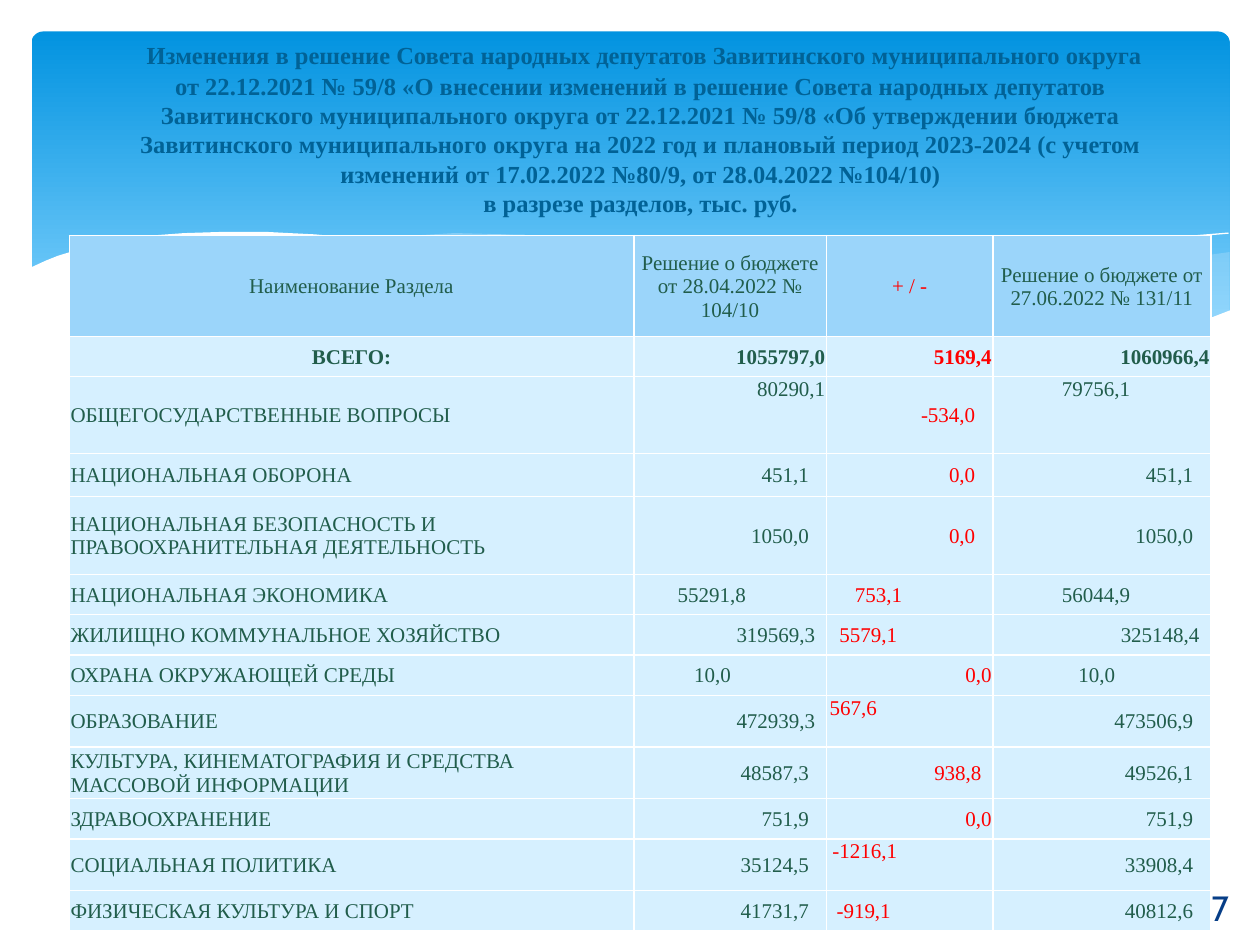
"""Builds the slide on budget changes by section: wave header, title and table."""
from lxml import etree
from pptx import Presentation
from pptx import util as u
from pptx.dml.color import RGBColor
from pptx.enum import shapes, text
from pptx.oxml.ns import qn

SERIF, GREEN, RED, WHITE = "Times New Roman", "215D4B", "FF0000", "FFFFFF"
LEFT, CENTER, RIGHT = text.PP_ALIGN.LEFT, text.PP_ALIGN.CENTER, text.PP_ALIGN.RIGHT
TOP, MIDDLE = text.MSO_ANCHOR.TOP, text.MSO_ANCHOR.MIDDLE


def rgb(value):
    return RGBColor.from_string(value)


def write(p, words, color, align, **fmt):
    p.alignment = align
    r = p.add_run()
    r.text = words
    r.font.color.rgb = rgb(color)
    for name, value in fmt.items():
        setattr(r.font, name, value)


prs = Presentation()
prs.slide_width, prs.slide_height = u.Inches(10), u.Inches(7.5)
s = prs.slides.add_slide(prs.slide_layouts[5])

sp = s.shapes.add_shape(shapes.MSO_SHAPE.ROUNDED_RECTANGLE, u.Inches(0.25),
                        u.Inches(0.25), u.Inches(9.51), u.Inches(2.7))
sp.adjustments[0] = 0.034
sp.shadow.inherit = False
sp.line.fill.background()
sp.fill.gradient()
sp.fill.gradient_angle = 270
for stop, position, color in zip(sp.fill.gradient_stops, (0, 0.9), ("0293E0", "83D3FE")):
    stop.position = position
    stop.color.rgb = rgb(color)

waves = [
    ("C6E7FC", 29, [
        (9.76, 2), (9.48, 2.04), (9.21, 2.1), (8.91, 2.16), (8.61, 2.23), (8.05, 2.37),
        (7.53, 2.48), (7.06, 2.57), (6.61, 2.65), (6.91, 2.69), (7.32, 2.74), (7.69, 2.77),
        (8.03, 2.78), (8.35, 2.77), (8.63, 2.75), (8.89, 2.72), (9.13, 2.67), (9.35, 2.62),
        (9.49, 2.57), (9.63, 2.52), (9.76, 2.47)]),
    ("C6E7FC", 40, [
        (8.93, 2.73), (8.66, 2.69), (8.07, 2.6), (7.41, 2.47), (6.68, 2.31), (6.29, 2.22),
        (5.98, 2.14), (5.69, 2.08), (5.41, 2.03), (5.14, 1.98), (4.89, 1.94), (4.42, 1.89),
        (3.99, 1.86), (3.61, 1.85), (3.28, 1.87), (2.86, 1.91), (3.23, 1.96), (3.62, 2.03),
        (4.04, 2.11), (4.49, 2.22), (5.3, 2.4), (5.84, 2.52), (6.34, 2.61), (6.8, 2.68),
        (7.22, 2.74), (7.61, 2.77), (7.96, 2.78), (8.28, 2.78), (8.57, 2.77)]),
    (None, 100, [
        (3.09, 1.95), (3.28, 1.92), (3.53, 1.89), (3.87, 1.87), (4.16, 1.87), (4.5, 1.88),
        (4.89, 1.9), (5.33, 1.94), (5.82, 2), (6.36, 2.08), (6.95, 2.19), (7.6, 2.33),
        (8.31, 2.51), (9.07, 2.72)]),
    (None, 100, [
        (6.13, 2.57), (6.53, 2.46), (6.95, 2.35), (7.48, 2.23), (8.06, 2.1), (8.66, 1.99),
        (8.95, 1.94), (9.24, 1.9), (9.51, 1.87), (9.75, 1.85)]),
    (WHITE, 100, [
        (9.77, 2.46), (9.59, 2.53), (9.4, 2.59), (9.2, 2.65), (8.99, 2.69), (8.75, 2.73),
        (8.5, 2.75), (8.09, 2.77), (7.61, 2.75), (7.08, 2.7), (6.48, 2.62), (5.79, 2.5),
        (5.03, 2.33), (4.47, 2.2), (3.91, 2.07), (3.4, 1.97), (2.92, 1.9), (2.71, 1.88),
        (2.5, 1.86), (2.3, 1.85), (2.11, 1.84), (1.77, 1.84), (1.46, 1.85), (1.19, 1.87),
        (0.95, 1.91), (0.76, 1.95), (0.59, 1.99), (0.46, 2.03), (0.36, 2.07), (0.23, 2.13),
        (0.23, 3.29), (9.77, 3.29)]),
]
for color, opacity, outline in waves:
    points = [(u.Inches(x), u.Inches(y)) for x, y in outline]
    builder = s.shapes.build_freeform(*points[0])
    builder.add_line_segments(points[1:], close=color is not None)
    sp = builder.convert_to_shape()
    sp.shadow.inherit = False
    if color is None:
        sp.fill.background()
        sp.line.color.rgb = rgb(WHITE)
        sp.line.width = 0
        continue
    sp.line.fill.background()
    sp.fill.solid()
    sp.fill.fore_color.rgb = rgb(color)
    if opacity < 100:
        clr = sp.element.spPr.find(qn("a:solidFill"))[0]
        etree.SubElement(clr, qn("a:alpha"), val=str(opacity * 1000))

title = s.shapes.title
s.shapes.element.append(title.element)
title.left, title.top = u.Inches(0.91), u.Inches(0.21)
title.width, title.height = u.Inches(8.35), u.Inches(1.58)
tf = title.text_frame
tf.word_wrap, tf.vertical_anchor = True, TOP
tf.auto_size = text.MSO_AUTO_SIZE.SHAPE_TO_FIT_TEXT
bold = dict(name=SERIF, bold=True)
write(tf.paragraphs[0], " ", "016296", CENTER, size=u.Pt(18), **bold)
write(tf.paragraphs[0],
      "Изменения в решение Совета народных депутатов Завитинского муниципального округа "
      "от 22.12.2021 № 59/8 «О внесении изменений в решение Совета народных депутатов "
      "Завитинского муниципального округа от 22.12.2021 № 59/8 «Об утверждении бюджета "
      "Завитинского муниципального округа на 2022 год и плановый период 2023-2024 (с учетом "
      "изменений от 17.02.2022 №80/9, от 28.04.2022 №104/10)",
      "016296", CENTER, size=u.Pt(14), **bold)
write(tf.add_paragraph(), "в разрезе разделов, тыс. руб.", "016296", CENTER,
      size=u.Pt(14), **bold)

number = s.shapes.add_textbox(u.Inches(9.37), u.Inches(6.9), u.Inches(0.63), u.Inches(0.6))
tf = number.text_frame
tf.word_wrap, tf.vertical_anchor = True, MIDDLE
write(tf.paragraphs[0], "7", "073E87", CENTER, size=u.Pt(20), name="Cabin")

header = ["Наименование Раздела", "Решение о бюджете от 28.04.2022 № 104/10", "+ / -",
          "Решение о бюджете от 27.06.2022 № 131/11"]
total = ["ВСЕГО:", "1055797,0", "5169,4", "1060966,4"]
flush, near, gap, far = 0.01, 0.09, 0.14, 0.64
rows = [
    (0.8, header, (flush,) * 3, ()),
    (0.32, total, (flush,) * 3, ()),
    (0.61, ["ОБЩЕГОСУДАРСТВЕННЫЕ ВОПРОСЫ", "80290,1", "-534,0", "79756,1"],
     (flush, gap, far), (1, 3)),
    (0.34, ["НАЦИОНАЛЬНАЯ ОБОРОНА", "451,1", "0,0", "451,1"], (gap,) * 3, ()),
    (0.62, ["НАЦИОНАЛЬНАЯ БЕЗОПАСНОСТЬ И ПРАВООХРАНИТЕЛЬНАЯ ДЕЯТЕЛЬНОСТЬ",
            "1050,0", "0,0", "1050,0"], (gap,) * 3, ()),
    (0.32, ["НАЦИОНАЛЬНАЯ ЭКОНОМИКА", "55291,8", "753,1", "56044,9"], (far, 0.72, far), ()),
    (0.32, ["ЖИЛИЩНО КОММУНАЛЬНОЕ ХОЗЯЙСТВО", "319569,3", "5579,1", "325148,4"],
     (near, 0.76, near), ()),
    (0.32, ["ОХРАНА ОКРУЖАЮЩЕЙ СРЕДЫ", "10,0", "0,0", "10,0"], (0.76, flush, 0.76), ()),
    (0.41, ["ОБРАЗОВАНИЕ", "472939,3", "567,6", "473506,9"], (near, 0.92, gap), (2,)),
    (0.41, ["КУЛЬТУРА, КИНЕМАТОГРАФИЯ И СРЕДСТВА МАССОВОЙ ИНФОРМАЦИИ",
            "48587,3", "938,8", "49526,1"], (gap, near, gap), ()),
    (0.32, ["ЗДРАВООХРАНЕНИЕ", "751,9", "0,0", "751,9"], (gap, flush, gap), ()),
    (0.41, ["СОЦИАЛЬНАЯ ПОЛИТИКА", "35124,5", "-1216,1", "33908,4"], (gap, 0.76, gap), (2,)),
    (0.32, ["ФИЗИЧЕСКАЯ КУЛЬТУРА И СПОРТ", "41731,7", "-919,1", "40812,6"],
     (gap, 0.81, gap), ()),
]
widths = [4.48, 1.53, 1.32, 1.73]
table = s.shapes.add_table(len(rows), len(widths), u.Inches(0.55), u.Inches(1.87),
                           u.Inches(sum(widths)), u.Inches(sum(row[0] for row in rows))).table
table.first_row = table.horz_banding = False
for column, width in zip(table.columns, widths):
    column.width = u.Inches(width)
for i, (height, words, gaps, raised) in enumerate(rows):
    table.rows[i].height = u.Inches(height)
    for j, word in enumerate(words):
        cell = table.cell(i, j)
        cell.margin_left = cell.margin_top = u.Inches(0.01)
        cell.margin_right = u.Inches((flush, *gaps)[j])
        cell.margin_bottom = 0
        cell.vertical_anchor = TOP if j in raised else MIDDLE
        cell.fill.solid()
        cell.fill.fore_color.rgb = rgb("D6F0FF" if i else "9BD5FA")
        align = CENTER if i == 0 or (i, j) == (1, 0) else RIGHT if j else LEFT
        write(cell.text_frame.paragraphs[0], word, RED if j == 2 else GREEN, align,
              size=u.Pt(12), name=SERIF, bold=i == 1)
        tc_pr = cell._tc.get_or_add_tcPr()
        for k, side in enumerate(("lnL", "lnR", "lnT", "lnB")):
            ln = etree.Element(qn("a:" + side), w=str(u.Pt(1)))
            fill = etree.SubElement(ln, qn("a:solidFill"))
            etree.SubElement(fill, qn("a:srgbClr"), val=WHITE)
            tc_pr.insert(k, ln)

prs.save("out.pptx")
